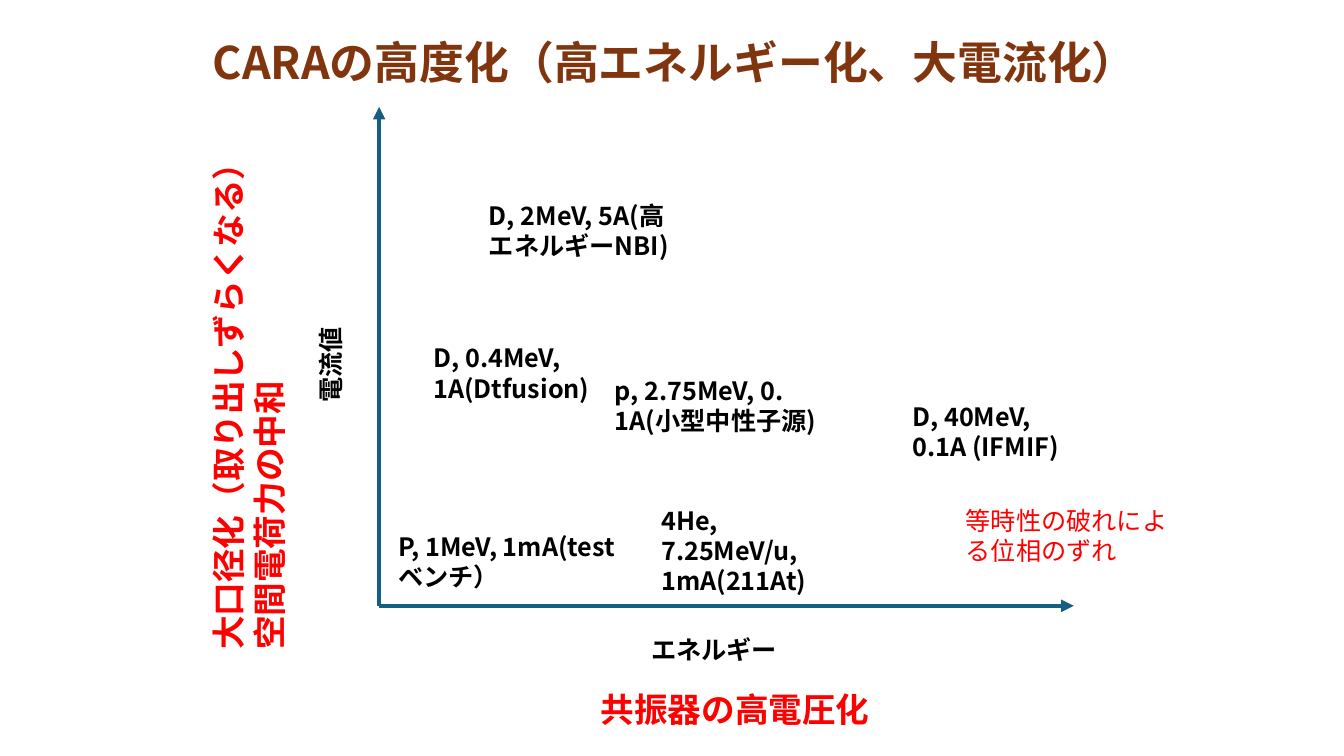
"""Build the CARA upgrade slide: beam current against energy."""
import pptx
import pptx.util
import pptx.dml.color
import pptx.enum.shapes
import pptx.enum.text
import pptx.oxml.ns
from lxml import etree

PX = 9144
FONT = "Noto Sans CJK JP"
COLORS = {"title": "80350E", "axis": "156082", "label": "000000", "issue": "FF0000"}


def add_part(parent, tag, **attributes):
    return etree.SubElement(parent, pptx.oxml.ns.qn(tag), attributes)


def write_text(target, box, text, size, color, bold=True, rotation=0):
    for side, length in zip(("left", "top", "width", "height"), box):
        setattr(target, side, length * PX)
    target.rotation = rotation
    frame = target.text_frame
    frame.text = text
    frame_format = {
        "word_wrap": True,
        "auto_size": pptx.enum.text.MSO_AUTO_SIZE.NONE,
        "vertical_anchor": pptx.enum.text.MSO_ANCHOR.TOP,
    }
    font_format = {"name": FONT, "size": pptx.util.Pt(size), "bold": bold}
    for key, value in frame_format.items():
        setattr(frame, key, value)
    for paragraph in frame.paragraphs:
        paragraph.alignment = pptx.enum.text.PP_ALIGN.LEFT
        for run in paragraph.runs:
            for key, value in font_format.items():
                setattr(run.font, key, value)
            run.font.color.rgb = pptx.dml.color.RGBColor.from_string(COLORS[color])
            add_part(run.font._element, "a:ea", typeface=FONT)


deck = pptx.Presentation()
deck.slide_width = 1333 * PX
deck.slide_height = 750 * PX
slide = deck.slides.add_slide(deck.slide_layouts[5])

write_text(slide.shapes.title, (201, 29, 980, 64),
           "CARAの高度化（高エネルギー化、大電流化）", 32, "title")

origin = (376, 601)
for axis_end in ((376, 106), (1065, 601)):
    axis = slide.shapes.add_connector(
        pptx.enum.shapes.MSO_CONNECTOR.STRAIGHT,
        *(length * PX for length in origin + axis_end))
    axis.line.color.rgb = pptx.dml.color.RGBColor.from_string(COLORS["axis"])
    axis.line.width = pptx.util.Pt(3)
    add_part(axis.line._get_or_add_ln(), "a:tailEnd", type="triangle")
    add_part(axis._element.spPr, "a:effectLst")

labels = [
    ((636, 624, 299, 40), "エネルギー", 18, "label", True, 0),
    ((178, 240, 299, 40), "電流値", 18, "label", True, 270),
    ((385, 522, 239, 71), "P, 1MeV, 1mA(testベンチ）", 18, "label", True, 0),
    ((475, 194, 206, 71), "D, 2MeV, 5A(高エネルギーNBI)", 18, "label", True, 0),
    ((895, 393, 185, 71), "D, 40MeV, 0.1A (IFMIF)", 18, "label", True, 0),
    ((646, 496, 185, 101), "4He, 7.25MeV/u, 1mA(211At)", 18, "label", True, 0),
    ((600, 367, 267, 71), "p, 2.75MeV, 0.\n1A(小型中性子源)", 18, "label", True, 0),
    ((420, 335, 191, 71), "D, 0.4MeV, 1A(Dtfusion)", 18, "label", True, 0),
    ((-32, 330, 558, 91), "大口径化（取り出しずらくなる）\n空間電荷力の中和", 24, "issue", True, 270),
    ((586, 679, 437, 50), "共振器の高電圧化", 24, "issue", True, 0),
    ((948, 496, 219, 71), "等時性の破れによる位相のずれ", 18, "issue", False, 0),
]
for box, text, size, color, bold, rotation in labels:
    label = slide.shapes.add_textbox(0, 0, PX, PX)
    write_text(label, box, text, size, color, bold, rotation)

deck.save("out.pptx")
